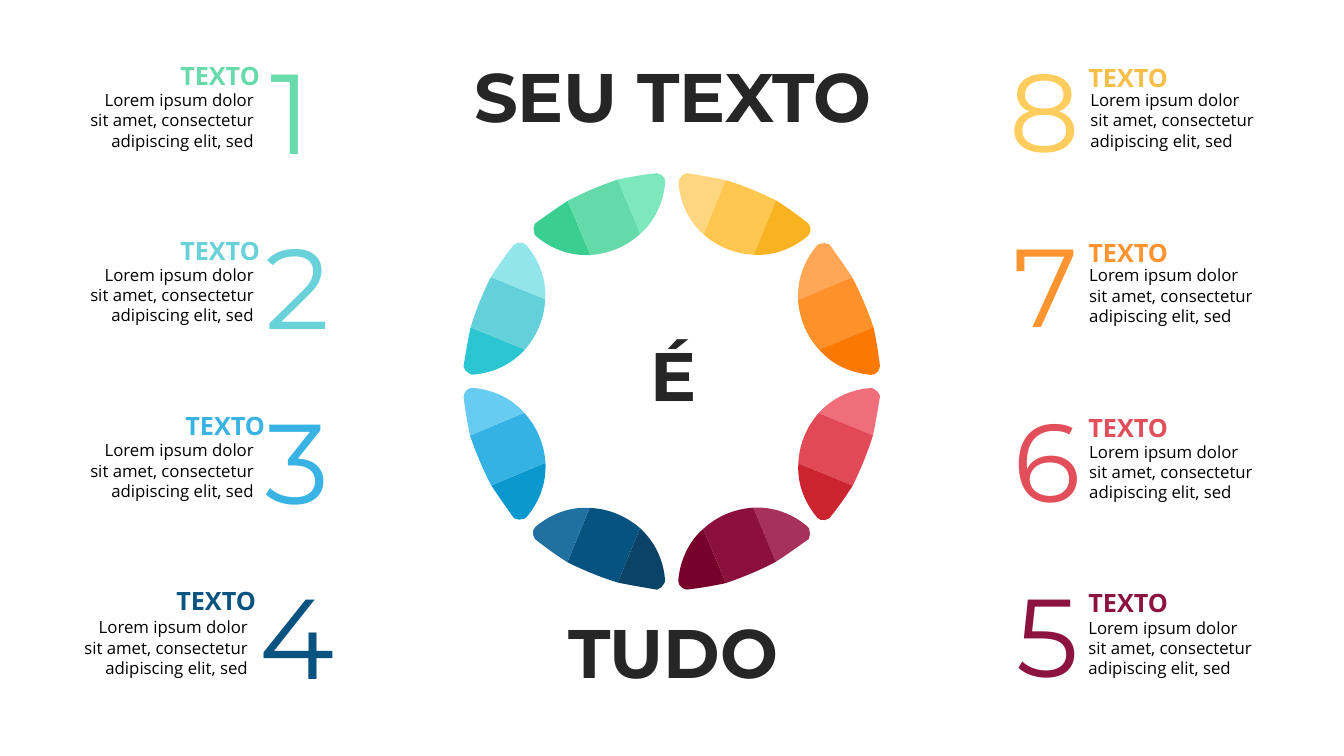
import math

import pptx
import pptx.dml.color
import pptx.enum.text
import pptx.oxml.ns
import pptx.util
import lxml.etree

Cm = pptx.util.Cm
ALIGN = pptx.enum.text.PP_ALIGN
qn = pptx.oxml.ns.qn

# Content
BODY = "Lorem ipsum dolor sit amet, consectetur adipiscing elit, sed"
HEADING = "TEXTO"

TITLES = [  # text, left, top, width in cm
    ("SEU TEXTO", 11.51, 1.37, 10.9),
    ("É", 16.1, 8.38, 1.73),
    ("TUDO", 11.2, 15.37, 11.53),
]

# Left column: numeral, colour, heading right, body right, numeral left, body drop
LEFT_ITEMS = [
    ("1", "69DAAB", 6.55, 6.65, 6.83, 0.61),
    ("2", "69D1DA", 6.55, 6.65, 6.68, 0.59),
    ("3", "39B3E3", 6.68, 6.65, 6.68, 0.61),
    ("4", "095380", 6.45, 6.5, 6.55, 0.66),
]
# Right column: numeral, numeral colour, heading colour, body left, numeral left, body drop
RIGHT_ITEMS = [
    ("8", "FFCC5E", "F7BE48", 27.23, 25.43, 0.58),
    ("7", "FF9430", "FF9430", 27.2, 25.55, 0.58),
    ("6", "E24E5A", "E24E5A", 27.2, 25.55, 0.61),
    ("5", "8C133F", "8C133F", 27.18, 25.63, 0.64),
]

# Petal colours clockwise from the top: leading tip, middle, trailing tip
PETALS = [
    ("FFD680", "FFC74F", "FAB320"),
    ("FFA757", "FF912B", "FA7902"),
    ("F06E7A", "E24956", "CC2331"),
    ("A6325C", "8C103D", "78012C"),
    ("0A4366", "065280", "2070A1"),
    ("0A98CF", "34B2E3", "68CBF2"),
    ("2CC6D2", "64D1DA", "91E5EB"),
    ("3ACF91", "64DAA9", "7DE8BC"),
]

# Outlines of the first petal in cm from the ring centre: a start point, then
# segments of one point (line) or three points (Bezier curve)
LEADING_TIP = [
    [(0.8, -3.7)],
    [(0.44, -4.03), (0.22, -4.46), (0.17, -4.99)],
    [(0.17, -5.04), (0.17, -5.07), (0.19, -5.09)],
    [(0.22, -5.17), (0.29, -5.22), (0.37, -5.25)],
    [(0.72, -5.19), (1.03, -5.14), (1.36, -5.07)],
]
MIDDLE = [
    [(1.36, -5.07)],
    [(0.8, -3.7)],
    [(1.16, -3.39), (1.59, -3.21), (2.07, -3.19)],
    [(2.63, -4.56)],
    [(2.22, -4.76), (1.79, -4.94), (1.36, -5.07)],
]
TRAILING_TIP = [
    [(2.07, -3.19)],
    [(2.53, -3.16), (3.01, -3.31), (3.44, -3.67)],
    [(3.44, -3.7), (3.47, -3.7), (3.49, -3.75)],
    [(3.52, -3.82), (3.49, -3.9), (3.44, -3.98)],
    [(3.19, -4.18), (2.91, -4.38), (2.63, -4.56)],
]
CENTRE = (16.93, 9.61)
ROW_TOP, ROW_PITCH = 1.53, 4.41
HEADING_LEFT, HEADING_WIDTH, BODY_WIDTH = 27.43, 3.1, 4.7

# Text formats
BODY_FONT = {"name": "Open Sans", "size": pptx.util.Pt(12), "bold": False}
HEADING_FONT = {"name": "Open Sans", "size": pptx.util.Pt(18), "bold": True}
LEFT_NUMERAL_FONT = {"name": "Montserrat", "size": pptx.util.Pt(81), "bold": False}
RIGHT_NUMERAL_FONT = {"name": "Montserrat", "size": pptx.util.Pt(79), "bold": False}
TITLE_FONT = {"name": "Montserrat", "size": pptx.util.Pt(49), "bold": True}


def colour(hex_text):
    return pptx.dml.color.RGBColor.from_string(hex_text)


def add_text(slide, text, box, font_format, hex_text, align=ALIGN.LEFT, insets=(0, 0)):
    shape = slide.shapes.add_textbox(*(Cm(length) for length in box))
    side, end = (Cm(inset) for inset in insets)
    frame_format = {"word_wrap": True, "margin_left": side, "margin_right": side,
                    "margin_top": end, "margin_bottom": end}
    for name, value in frame_format.items():
        setattr(shape.text_frame, name, value)
    paragraph = shape.text_frame.paragraphs[0]
    paragraph.alignment = align
    run = paragraph.add_run()
    run.text = text
    for name, value in font_format.items():
        setattr(run.font, name, value)
    run.font.color.rgb = colour(hex_text)


def curve_segments(shape, outline):
    """Merge the lines of each three-point segment into one Bezier curve."""
    lines = iter(list(shape.element.iter(qn("a:lnTo"))))
    for segment in outline[1:]:
        members = [next(lines) for _ in segment]
        if len(segment) == 3:
            curve = lxml.etree.Element(qn("a:cubicBezTo"))
            members[0].addprevious(curve)
            for line in members:
                curve.append(line[0])
                line.getparent().remove(line)


def add_petal_part(slide, outline, angle, hex_text):
    cosine, sine = math.cos(angle), math.sin(angle)
    points = [(Cm(CENTRE[0] + x * cosine - y * sine), Cm(CENTRE[1] + x * sine + y * cosine))
              for segment in outline for x, y in segment]
    builder = slide.shapes.build_freeform(*points[0])
    builder.add_line_segments(points[1:], close=True)
    shape = builder.convert_to_shape()
    curve_segments(shape, outline)
    shape.shadow.inherit = False
    shape.fill.solid()
    shape.fill.fore_color.rgb = colour(hex_text)
    shape.line.fill.background()


def add_item(slide, numeral, numeral_colour, numeral_font, numeral_left,
             heading_colour, heading_left, body_left, body_drop, top, align):
    add_text(slide, BODY, (body_left, top + body_drop, BODY_WIDTH, 1.8),
             BODY_FONT, "000000", align, (0.25, 0.13))
    add_text(slide, HEADING, (heading_left, top, HEADING_WIDTH, 0.69),
             HEADING_FONT, heading_colour, align)
    add_text(slide, numeral, (numeral_left, top - 0.5, 1.75, 3.4),
             numeral_font, numeral_colour)


def main():
    presentation = pptx.Presentation()
    presentation.slide_width, presentation.slide_height = Cm(33.87), Cm(19.05)
    slide = presentation.slides.add_slide(presentation.slide_layouts[6])

    # Numbered items on both sides
    for row, (numeral, hue, heading_right, body_right, left, drop) in enumerate(LEFT_ITEMS):
        add_item(slide, numeral, hue, LEFT_NUMERAL_FONT, left, hue,
                 heading_right - HEADING_WIDTH, body_right - BODY_WIDTH, drop,
                 ROW_TOP + row * ROW_PITCH, ALIGN.RIGHT)
    for row, (numeral, hue, heading_hue, body_left, left, drop) in enumerate(RIGHT_ITEMS):
        add_item(slide, numeral, hue, RIGHT_NUMERAL_FONT, left, heading_hue,
                 HEADING_LEFT, body_left, drop, ROW_TOP + 0.03 + row * ROW_PITCH, ALIGN.LEFT)

    # Ring of petals
    for index, hues in enumerate(PETALS):
        angle = index * 2 * math.pi / len(PETALS)
        for outline, hue in zip((LEADING_TIP, MIDDLE, TRAILING_TIP), hues):
            add_petal_part(slide, outline, angle, hue)

    # Titles
    for text, left, top, width in TITLES:
        add_text(slide, text, (left, top, width, 2.08), TITLE_FONT, "262626", ALIGN.CENTER)

    presentation.save("out.pptx")


if __name__ == "__main__":
    main()
